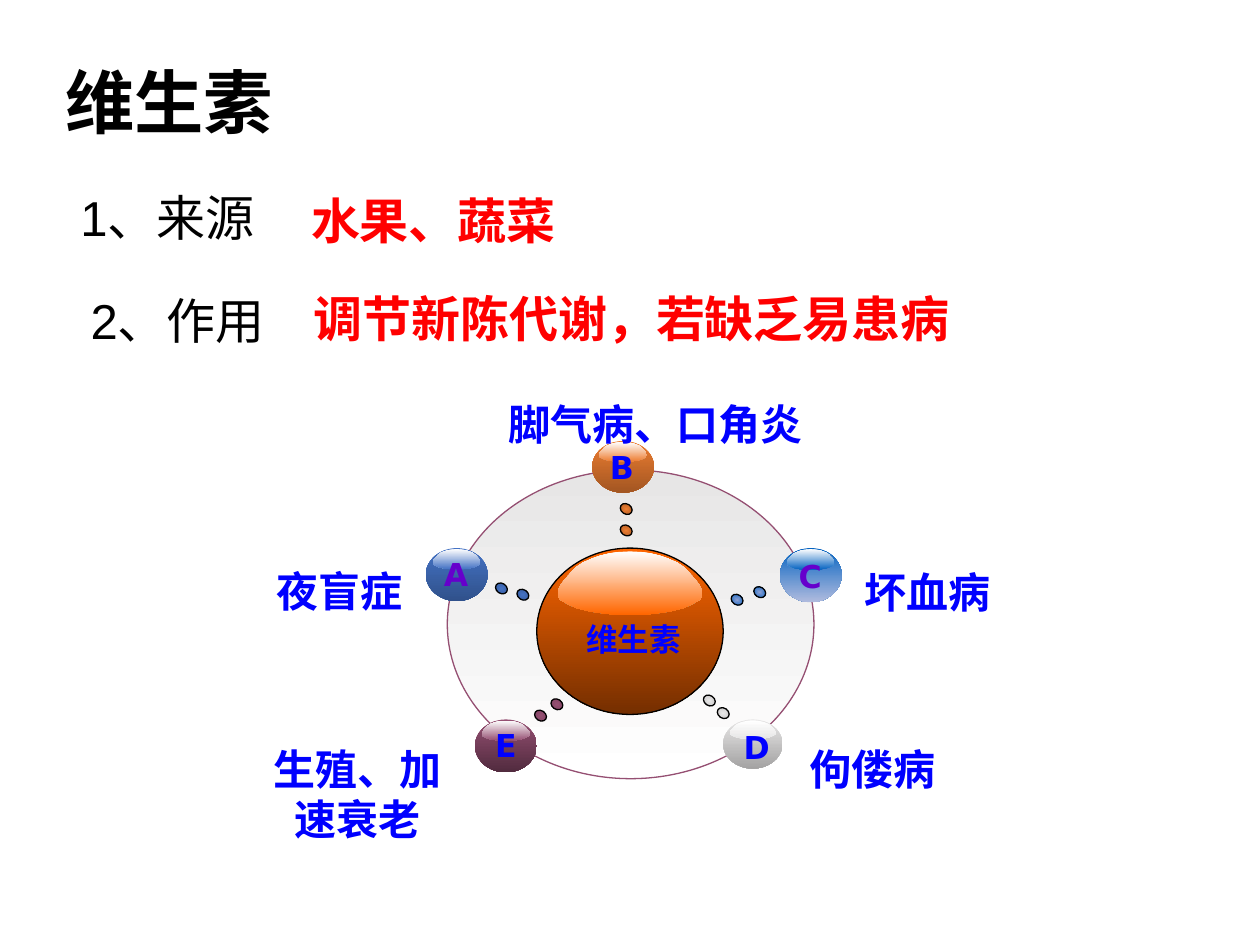
from lxml import etree
from pptx import Presentation
from pptx.dml.color import RGBColor
from pptx.enum import shapes, text
from pptx.oxml import ns
from pptx.util import Inches, Pt

COLORS = {
    "black": "000000", "white": "FFFFFF", "red": "FF0000", "blue": "0000FF",
    "violet": "6600CC", "ring": "954F72", "ring_top": "E7E6E6",
    "core": "FF6600", "core_dark": "742E00",
}
CJK = "Noto Sans CJK SC"
LATIN = "Arial"
LETTER = "DejaVu Sans"

# Right half of the highlight outline, from top centre to bottom, in a unit square
GLOSS_HALF = [
    (0.5, 0), (0.58, 0.01), (0.64, 0.03), (0.71, 0.07), (0.77, 0.12),
    (0.83, 0.18), (0.88, 0.26), (0.92, 0.36), (0.96, 0.46), (0.99, 0.56),
    (1, 0.63), (1, 0.7), (0.99, 0.76), (0.96, 0.8), (0.92, 0.85),
    (0.87, 0.9), (0.78, 0.95), (0.69, 0.98), (0.61, 1),
]

# letter, ball box, letter box (left, top, width), letter colour, ball gradient,
# dot gradient, dot positions
VITAMINS = [
    ("B", (4.7, 3.5, 0.49, 0.41), (4.74, 3.51, 0.39), "blue",
     ("ED7D31", "A35622"), ("ED7D31", "A85923"), [(4.93, 3.99), (4.93, 4.16)]),
    ("E", (3.77, 5.71, 0.49, 0.42), (3.83, 5.71, 0.37), "blue",
     ("954F72", "512B3E"), ("954F72", "7D4260"), [(4.25, 5.63), (4.38, 5.54)]),
    ("C", (6.19, 4.35, 0.49, 0.43), (6.24, 4.37, 0.38), "violet",
     ("0563C1", "B0BBDE"), ("8A9DD2", "0563C1"), [(5.99, 4.65), (5.81, 4.71)]),
    ("D", (5.74, 5.71, 0.47, 0.39), (5.8, 5.73, 0.41), "blue",
     ("E7E6E6", "A4A3A3"), ("E7E6E6", "C2C1C1"), [(5.7, 5.61), (5.59, 5.51)]),
    ("A", (3.38, 4.35, 0.49, 0.42), (3.42, 4.36, 0.4), "violet",
     ("4472C4", "30518B"), ("4472C4", "365A9A"), [(3.94, 4.62), (4.11, 4.67)]),
]

DISEASES = [
    ("夜盲症", (2.01, 4.44, 1.37, 0.5)),
    ("脚气病、口角炎", (3.84, 3.11, 2.73, 0.5)),
    ("坏血病", (6.68, 4.45, 1.37, 0.5)),
    ("生殖、加速衰老", (2.01, 5.85, 1.65, 0.91)),
    ("佝偻病", (6.24, 5.85, 1.37, 0.5)),
]

# wording, box, font, colour, bold, line spacing
STATEMENTS = [
    ("1、来源", (0.54, 1.49, 1.75, 0.51), LATIN, "black", False, 0.9),
    ("水果、蔬菜", (2.37, 1.46, 3.15, 0.57), CJK, "red", True, None),
    ("2、作用", (0.62, 2.26, 1.75, 0.57), LATIN, "black", False, None),
    ("调节新陈代谢，若缺乏易患病", (2.39, 2.24, 5.45, 0.57), CJK, "red", True, None),
]


def add_label(parent, wording, box, size, font, color, bold=True, centred=False,
              wrap=True, spacing=None):
    label = parent.add_textbox(*map(Inches, box))
    frame = label.text_frame
    frame.word_wrap = wrap
    frame.text = wording
    paragraph = frame.paragraphs[0]
    if centred:
        paragraph.alignment = text.PP_ALIGN.CENTER
    if spacing:
        paragraph.line_spacing = spacing
    run = paragraph.runs[0]
    run.font.name = font
    run.font.size = Pt(size)
    run.font.bold = bold
    run.font.color.rgb = RGBColor.from_string(COLORS[color])
    east_asian = etree.SubElement(run.font._element, ns.qn("a:ea"))
    east_asian.set("typeface", CJK)
    return label


def shade(shape, top, bottom, line=None):
    """Fill with a downward gradient; draw a thin outline only if line is given."""
    shape.shadow.inherit = False
    shape.fill.gradient()
    shape.fill.gradient_angle = 270
    for stop, color in zip(shape.fill.gradient_stops, (top, bottom)):
        stop.color.rgb = RGBColor.from_string(color)
    if line:
        shape.line.color.rgb = RGBColor.from_string(line)
        shape.line.width = Pt(0.75)
    else:
        shape.line.fill.background()


def add_ellipse(parent, box, top, bottom, line=None):
    ellipse = parent.add_shape(shapes.MSO_SHAPE.OVAL, *map(Inches, box))
    shade(ellipse, top, bottom, line)
    return ellipse


def add_gloss(parent, ball_box, color):
    """Add the light reflection on the upper part of a ball."""
    left, top, width, height = ball_box
    outline = GLOSS_HALF + [(1 - x, y) for x, y in reversed(GLOSS_HALF)]
    points = [(Inches(left + width * (0.115 + 0.77 * x)),
               Inches(top + height * (0.02 + 0.38 * y))) for x, y in outline]
    builder = parent.build_freeform(*points[0])
    builder.add_line_segments(points[1:], close=True)
    shade(builder.convert_to_shape(), COLORS["white"], color)


def add_ball(slide, box, gradient, line=None):
    """Add a glossy ball and return the shapes of its group."""
    ball = slide.shapes.add_group_shape().shapes
    add_ellipse(ball, box, *gradient, line)
    add_gloss(ball, box, gradient[0])
    return ball


def add_dots(slide, gradient, positions):
    """Add a pair of tilted dots shaded from the centre outwards."""
    pair = slide.shapes.add_group_shape().shapes
    for left, top in positions:
        dot = add_ellipse(pair, (left, top, 0.08, 0.1), *gradient, COLORS["black"])
        dot.rotation = 303.8
        linear = dot._element.spPr.find(".//" + ns.qn("a:lin"))
        radial = etree.Element(ns.qn("a:path"), path="shape")
        etree.SubElement(radial, ns.qn("a:fillToRect"),
                         {side: "50000" for side in "ltrb"})
        linear.getparent().replace(linear, radial)


def main():
    deck = Presentation()
    deck.slide_width, deck.slide_height = Inches(10), Inches(7.5)
    slide = deck.slides.add_slide(deck.slide_layouts[6])

    title = add_label(slide.shapes, "维生素", (0.42, 0.56, 6.47, 0.56), 39.6, CJK,
                      "black", spacing=0.9)
    title.text_frame.vertical_anchor = text.MSO_ANCHOR.MIDDLE
    for wording, box, font, color, bold, spacing in STATEMENTS:
        add_label(slide.shapes, wording, box, 28, font, color, bold, spacing=spacing)

    add_ellipse(slide.shapes, (3.55, 3.73, 2.91, 2.45), COLORS["ring_top"],
                COLORS["white"], COLORS["ring"])
    add_ball(slide, (4.26, 4.35, 1.48, 1.32),
             (COLORS["core"], COLORS["core_dark"]), COLORS["black"])
    add_label(slide.shapes, "维生素", (4.55, 4.87, 0.96, 0.4), 18, LATIN, "blue",
              centred=True, wrap=False)

    for letter, box, letter_box, color, gradient, dot_gradient, dots in VITAMINS:
        ball = add_ball(slide, box, gradient)
        add_label(ball, letter, (*letter_box, 0.4), 18, LETTER, color,
                  centred=True, wrap=False)
        add_dots(slide, dot_gradient, dots)

    for disease, box in DISEASES:
        add_label(slide.shapes, disease, box, 24, LATIN, "blue", centred=True)

    deck.save("out.pptx")


if __name__ == "__main__":
    main()
